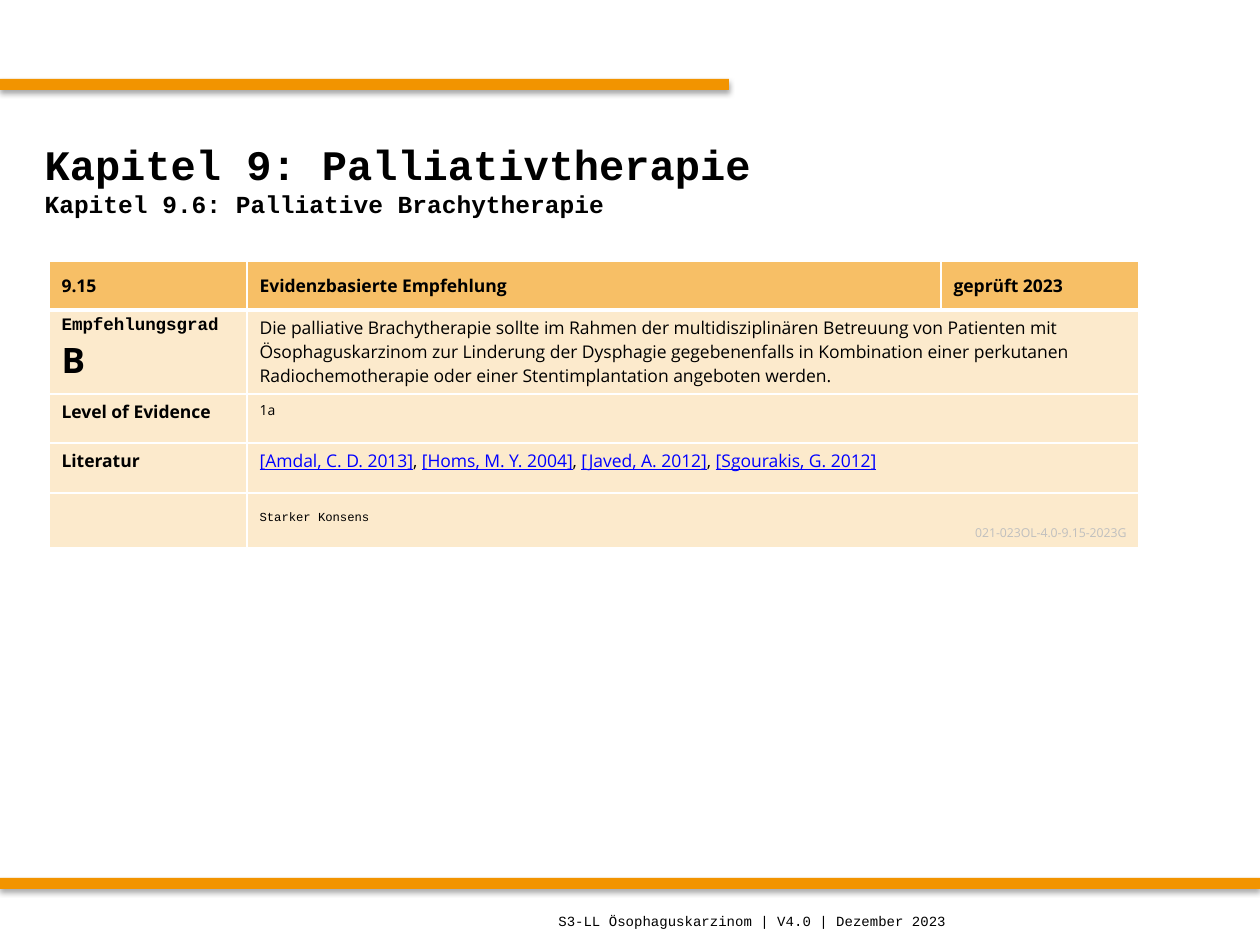
from dataclasses import dataclass

from lxml import etree
from pptx import Presentation
from pptx.dml.color import RGBColor
from pptx.enum.shapes import MSO_SHAPE
from pptx.enum.text import MSO_ANCHOR, PP_ALIGN
from pptx.oxml.ns import qn
from pptx.util import Emu, Pt

RECTANGLE = MSO_SHAPE.RECTANGLE
TOP, MIDDLE, BOTTOM = MSO_ANCHOR.TOP, MSO_ANCHOR.MIDDLE, MSO_ANCHOR.BOTTOM
LEFT, RIGHT = PP_ALIGN.LEFT, PP_ALIGN.RIGHT
MONO, SANS = "Courier New", "Open Sans"
EMU_PER_PX = 914400 / 126
COLORS = {
    "text": "000000", "bar": "F29400", "header": "F7BF66", "body": "FCEACC",
    "border": "FFFFFF", "link": "0000FF", "code": "BFBFBF",
}


@dataclass
class Bar:
    top: int
    width: int


@dataclass
class Line:
    """One paragraph; each wording is a text with the name of its colour."""
    wordings: list[tuple[str, str]]
    size: int = 10
    font: str = SANS
    bold: bool = False
    align: PP_ALIGN = LEFT


@dataclass
class Row:
    height: int
    cells: list[list[Line]]
    fill: str = "body"
    anchors: tuple = (TOP, TOP)


def px(length: int) -> Emu:
    return Emu(round(length * EMU_PER_PX))


def line(text: str, color: str = "text", **fmt) -> Line:
    return Line([(text, color)], **fmt)


def write(frame, lines: list[Line], anchor=TOP) -> None:
    frame.word_wrap = True
    frame.vertical_anchor = anchor
    for i, item in enumerate(lines):
        paragraph = frame.add_paragraph() if i else frame.paragraphs[0]
        paragraph.alignment = item.align
        for text, color in item.wordings:
            run = paragraph.add_run()
            run.text = text
            font = run.font
            font.size, font.name, font.bold = Pt(item.size), item.font, item.bold
            font.underline = color == "link"
            font.color.rgb = RGBColor.from_string(COLORS[color])


def draw_bar(slide, bar: Bar) -> None:
    shape = slide.shapes.add_shape(RECTANGLE, 0, px(bar.top), px(bar.width), px(11))
    shape.fill.solid()
    shape.fill.fore_color.rgb = RGBColor.from_string(COLORS["bar"])
    shape.line.fill.background()
    shape.shadow.inherit = False
    effects = shape._element.spPr.find(qn("a:effectLst"))
    shadow = etree.SubElement(effects, qn("a:outerShdw"), blurRad="40000",
                              dist="23000", dir="5400000", rotWithShape="0")
    color = etree.SubElement(shadow, qn("a:srgbClr"), val=COLORS["text"])
    etree.SubElement(color, qn("a:alpha"), val="35000")


def style_cell(cell, fill: str, top: int, bottom: int) -> None:
    cell.fill.solid()
    cell.fill.fore_color.rgb = RGBColor.from_string(COLORS[fill])
    properties = cell._tc.get_or_add_tcPr()
    widths = {"a:lnL": 1, "a:lnR": 1, "a:lnT": top, "a:lnB": bottom}
    for i, (tag, width) in enumerate(widths.items()):
        border = etree.Element(qn(tag), w=str(Pt(width)))
        solid = etree.SubElement(border, qn("a:solidFill"))
        etree.SubElement(solid, qn("a:srgbClr"), val=COLORS["border"])
        properties.insert(i, border)


def draw_table(slide, left: int, top: int, columns: list[int], rows: list[Row]) -> None:
    height = sum(row.height for row in rows)
    table = slide.shapes.add_table(len(rows), len(columns), px(left), px(top),
                                   px(sum(columns)), px(height)).table
    table.first_row = table.horz_banding = False
    for column, width in zip(table.columns, columns):
        column.width = px(width)
    for r, row in enumerate(rows):
        table.rows[r].height = px(row.height)
        for c in range(len(columns)):
            style_cell(table.cell(r, c), row.fill,
                       top=3 if r == 1 else 1, bottom=3 if r == 0 else 1)
        if len(row.cells) < len(columns):
            table.cell(r, 1).merge(table.cell(r, len(columns) - 1))
        for c, (lines, anchor) in enumerate(zip(row.cells, row.anchors)):
            cell = table.cell(r, c)
            write(cell.text_frame, lines)
            cell.vertical_anchor = anchor


BARS = [Bar(79, 729), Bar(878, 1260)]
TITLE = [
    line("Kapitel 9: Palliativtherapie", size=24, font=MONO, bold=True),
    line("Kapitel 9.6: Palliative Brachytherapie", size=14, font=MONO, bold=True),
]
RECOMMENDATION = (
    "Die palliative Brachytherapie sollte im Rahmen der multidisziplinären Betreuung "
    "von Patienten mit Ösophaguskarzinom zur Linderung der Dysphagie gegebenenfalls "
    "in Kombination einer perkutanen Radiochemotherapie oder einer "
    "Stentimplantation angeboten werden."
)
LITERATURE = Line([
    ("[Amdal, C. D. 2013]", "link"), (", ", "text"),
    ("[Homs, M. Y. 2004]", "link"), (", ", "text"),
    ("[Javed, A. 2012]", "link"), (", ", "text"),
    ("[Sgourakis, G. 2012]", "link"),
])
HEADINGS = ["9.15", "Evidenzbasierte Empfehlung", "geprüft 2023"]
ROWS = [
    Row(49, [[line(text, bold=True)] for text in HEADINGS], "header", (MIDDLE,) * 3),
    Row(84, [[line("Empfehlungsgrad", font=MONO, bold=True),
              line("B", size=20, bold=True)], [line(RECOMMENDATION)]]),
    Row(49, [[line("Level of Evidence", bold=True)], [line("1a", size=8)]]),
    Row(50, [[line("Literatur", bold=True)], [LITERATURE]]),
    Row(55, [[], [line("Starker Konsens", size=7, font=MONO),
                  line("021-023OL-4.0-9.15-2023G", "code", size=7, align=RIGHT)]],
        anchors=(TOP, BOTTOM)),
]
FOOTER = line("S3-LL Ösophaguskarzinom | V4.0 | Dezember 2023", size=8, font=MONO)


def main() -> None:
    deck = Presentation()
    deck.slide_width, deck.slide_height = px(1260), px(945)
    slide = deck.slides.add_slide(deck.slide_layouts[5])

    # Orange bars
    for bar in BARS:
        draw_bar(slide, bar)

    # Chapter title
    title = slide.shapes.title
    title.left, title.top, title.width, title.height = px(32), px(105), px(1197), px(147)
    write(title.text_frame, TITLE, MIDDLE)

    # Recommendation table
    draw_table(slide, 49, 261, [198, 694, 198], ROWS)

    # Footer
    footer = slide.shapes.add_textbox(px(546), px(896), px(694), px(49))
    write(footer.text_frame, [FOOTER], MIDDLE)

    deck.save("out.pptx")


if __name__ == "__main__":
    main()
